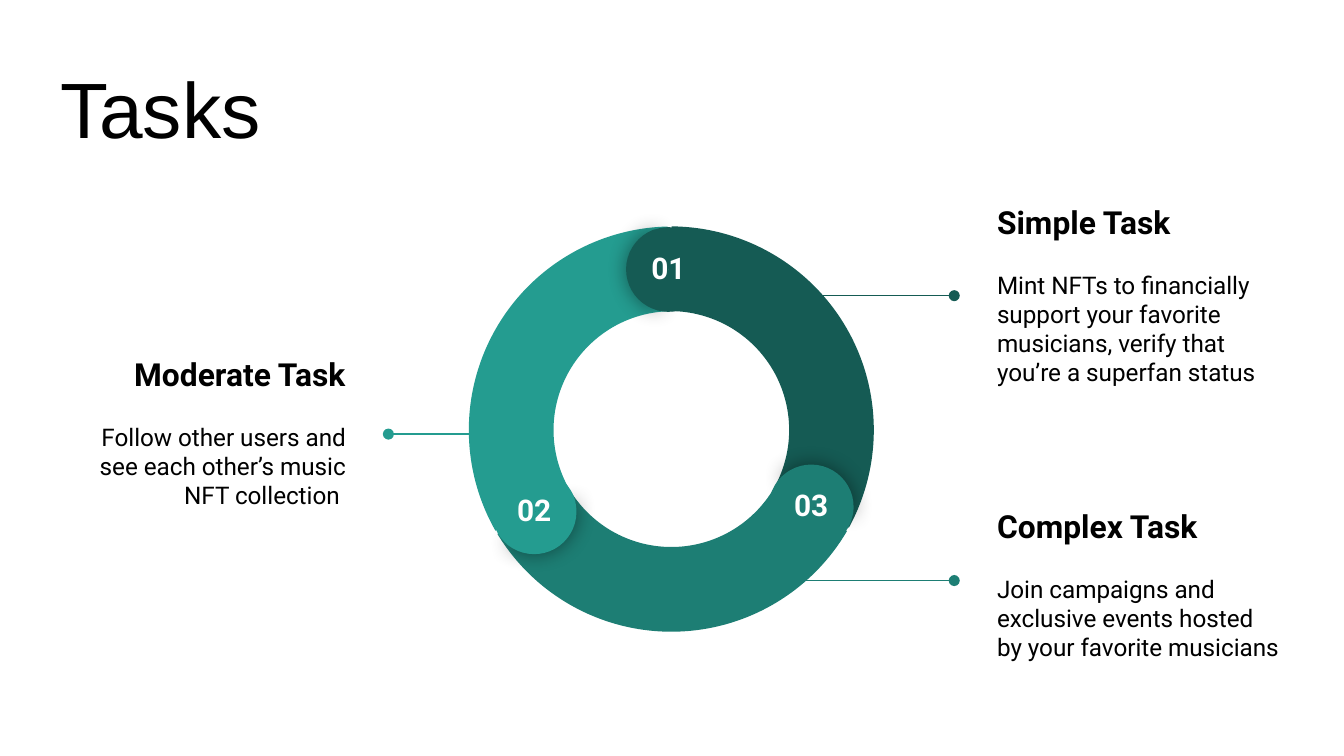
from dataclasses import dataclass
from math import cos, radians, sin

from lxml import etree
from pptx import Presentation
from pptx.dml.color import RGBColor
from pptx.enum.shapes import MSO_CONNECTOR, MSO_SHAPE
from pptx.enum.text import MSO_ANCHOR, PP_ALIGN
from pptx.oxml import parse_xml
from pptx.oxml.ns import nsdecls, qn
from pptx.util import Inches, Pt

STRAIGHT = MSO_CONNECTOR.STRAIGHT
ARC, PIE = MSO_SHAPE.BLOCK_ARC, MSO_SHAPE.PIE
LEFT, CENTER, RIGHT = PP_ALIGN.LEFT, PP_ALIGN.CENTER, PP_ALIGN.RIGHT
TOP, MIDDLE, BOTTOM = MSO_ANCHOR.TOP, MSO_ANCHOR.MIDDLE, MSO_ANCHOR.BOTTOM


@dataclass(frozen=True)
class Theme:
    black: str = "000000"
    white: str = "FFFFFF"
    dark: str = "155B54"
    medium: str = "1D7E74"
    light: str = "249C90"
    title_font: str = "Arial"
    body_font: str = "Roboto"
    title_size: float = 42
    heading_size: float = 17
    number_size: float = 16
    body_size: float = 13
    line_width: float = 0.75


THEME = Theme()

# number, clockwise angle of the segment's start, colour
SEGMENTS = [
    ("01", 0, THEME.dark),
    ("03", 120, THEME.medium),
    ("02", 240, THEME.light),
]

# box left and top, line offset from the box top, line length, colour, side, texts
CALLOUTS = [
    (0.35, 2.51, 0.72, 0.69, THEME.light, RIGHT, "Moderate Task",
     "Follow other users and see each other’s music NFT collection "),
    (7.32, 1.49, 0.71, 1.4, THEME.dark, LEFT, "Simple Task",
     "Mint NFTs to financially support your favorite musicians, "
     "verify that you’re a superfan status"),
    (7.32, 3.64, 0.68, 1.4, THEME.medium, LEFT, "Complex Task",
     "Join campaigns and exclusive events hosted by your favorite musicians"),
]


def add_text(slide, box, paragraphs, anchor, alignment, color=THEME.black):
    """Each paragraph is its text, a dict of font values and the space before in points."""
    text_frame = slide.shapes.add_textbox(*map(Inches, box)).text_frame
    frame_format = {"word_wrap": True, "vertical_anchor": anchor}
    for side in ("left", "top", "right", "bottom"):
        frame_format[f"margin_{side}"] = Inches(0.1)
    for name, value in frame_format.items():
        setattr(text_frame, name, value)
    for index, (text, font_format, space_before) in enumerate(paragraphs):
        paragraph = text_frame.add_paragraph() if index else text_frame.paragraphs[0]
        paragraph.alignment = alignment
        if space_before:
            paragraph.space_before = Pt(space_before)
        run = paragraph.add_run()
        run.text = text
        for name, value in font_format.items():
            setattr(run.font, name, value)
        run.font.color.rgb = RGBColor.from_string(color)


def add_title(slide, box, text):
    font_format = {"name": THEME.title_font, "size": Pt(THEME.title_size)}
    add_text(slide, box, [(text, font_format, 0)], BOTTOM, LEFT)


def add_leader(slide, start_x, end_x, y, color):
    """Draw a level line with a dot at its end."""
    connector = slide.shapes.add_connector(
        STRAIGHT, *map(Inches, (start_x, y, end_x, y)))
    connector.line.width = Pt(THEME.line_width)
    connector.line.color.rgb = RGBColor.from_string(color)
    etree.SubElement(connector.line._get_or_add_ln(), qn("a:tailEnd"), type="oval")
    etree.SubElement(connector._element.spPr, qn("a:effectLst"))


def add_callout(slide, box, line_offset, line_length, color, alignment, heading, body):
    left, top, width, _ = box
    if alignment == RIGHT:
        dot_x = left + width + 0.22
        start_x = dot_x + line_length
    else:
        dot_x = left - 0.22
        start_x = dot_x - line_length
    heading_format = {"name": THEME.body_font, "size": Pt(THEME.heading_size), "bold": True}
    body_format = {"name": THEME.body_font, "size": Pt(THEME.body_size), "bold": False}
    paragraphs = [(heading, heading_format, 0), (body, body_format, 15.5)]
    add_text(slide, box, paragraphs, MIDDLE, alignment)
    add_leader(slide, start_x, dot_x, top + line_offset, color)


def add_round_part(slide, kind, center, size, rotation, adjustments, color):
    x, y = center
    shape = slide.shapes.add_shape(
        kind, *map(Inches, (x - size / 2, y - size / 2, size, size)))
    shape.rotation = rotation % 360
    for index, value in enumerate(adjustments):
        shape.adjustments[index] = value
    shape.fill.solid()
    shape.fill.fore_color.rgb = RGBColor.from_string(color)
    shape.line.fill.background()
    shape.shadow.inherit = False
    return shape


def add_soft_shadow(shape):
    effects = shape._element.spPr.find(qn("a:effectLst"))
    effects.append(parse_xml(
        f'<a:outerShdw {nsdecls("a")} blurRad="{Pt(11.2)}" dist="0" dir="0" '
        f'algn="ctr" rotWithShape="0"><a:srgbClr val="{THEME.black}">'
        '<a:alpha val="43000"/></a:srgbClr></a:outerShdw>'))


def point_on_circle(center, radius, angle):
    """Angle runs clockwise from the top."""
    return (center[0] + radius * sin(radians(angle)),
            center[1] - radius * cos(radians(angle)))


def add_ring(slide, box, segments):
    left, top, size, _ = box
    center = (left + size / 2, top + size / 2)
    cap_size = 0.63
    cap_radius = 1.19
    for _, angle, color in segments:
        middle = angle + 60
        arc_center = point_on_circle(center, -0.01, middle)
        add_round_part(slide, ARC, arc_center, size, middle,
                       (126.23, 197.2, cap_size / size), color)

    number_format = {"name": THEME.body_font, "size": Pt(THEME.number_size), "bold": True}
    for number, angle, color in segments:
        x, y = point_on_circle(center, cap_radius, angle - 1)
        shaded_half = add_round_part(slide, PIE, (x, y), cap_size, angle + 0.7,
                                     (61.9, 149.96), color)
        add_soft_shadow(shaded_half)
        add_round_part(slide, PIE, (x, y), cap_size, angle + 180,
                       (40.28, 171.84), color)
        number_box = (x - 0.28, y - 0.25, 0.56, 0.29)
        add_text(slide, number_box, [(number, number_format, 0)], TOP, CENTER, THEME.white)


def main():
    presentation = Presentation()
    presentation.slide_width = Inches(10)
    presentation.slide_height = presentation.slide_width * 9 // 16
    slide = presentation.slides.add_slide(presentation.slide_layouts[6])
    add_title(slide, (0.35, 0.34, 9.32, 0.91), "Tasks")
    for left, top, *details in CALLOUTS:
        add_callout(slide, (left, top, 2.32, 1.41), *details)
    add_ring(slide, (3.48, 1.68, 3.03, 3.03), SEGMENTS)
    presentation.save("out.pptx")


if __name__ == "__main__":
    main()
